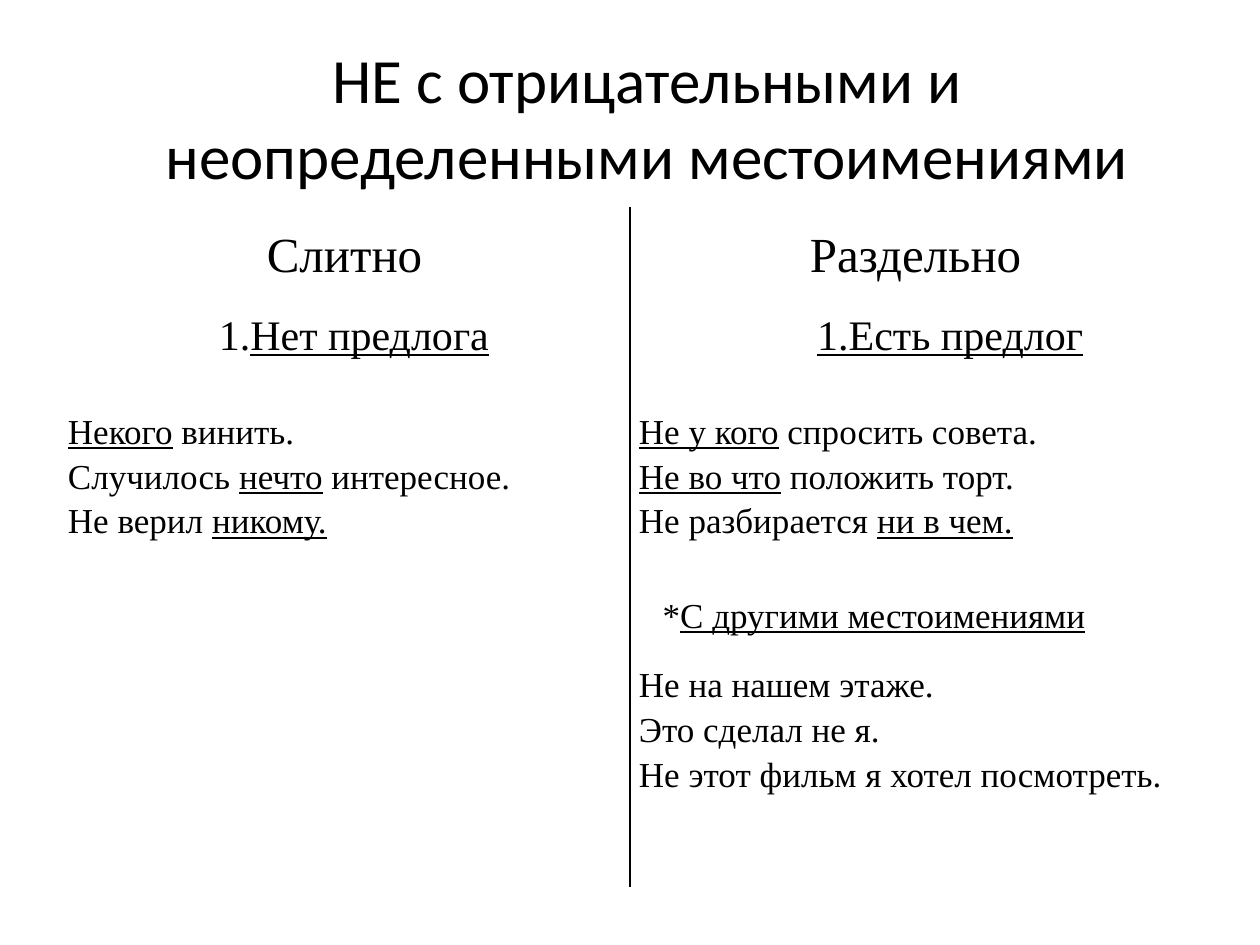
from lxml.etree import SubElement
from pptx import Presentation
from pptx.dml.color import RGBColor
from pptx.enum.text import MSO_ANCHOR, PP_ALIGN
from pptx.oxml import parse_xml
from pptx.oxml.ns import nsdecls, qn
from pptx.util import Cm, Pt


def color(code):
    return RGBColor.from_string(code)


def write(frame, text, size=20, font="Times New Roman", align=PP_ALIGN.JUSTIFY,
          space=1.15, ink="000000"):
    frame.word_wrap = True
    for row, line in enumerate(text.split("\n")):
        para = frame.paragraphs[0] if row == 0 else frame.add_paragraph()
        para.alignment = align
        para.line_spacing = space
        for part, words in enumerate(line.split("_")):
            if words:
                run = para.add_run()
                run.text = words
                run.font.size = Pt(size)
                run.font.name = font
                run.font.color.rgb = color(ink)
                run.font.underline = part % 2 == 1


deck = Presentation()
deck.slide_width, deck.slide_height = Cm(25.4), Cm(19.05)
slide = deck.slides.add_slide(deck.slide_layouts[5])

title = slide.shapes.title
title.left, title.top, title.width, title.height = Cm(1.27), Cm(0.76), Cm(23.55), Cm(3.18)
title.text_frame.vertical_anchor = MSO_ANCHOR.MIDDLE
write(title.text_frame, "НЕ с отрицательными и неопределенными местоимениями",
      size=36, font="Calibri", align=PP_ALIGN.CENTER, space=1)

highs = [1.83, 2.21, 3.43, 1.68, 4.57]
frame = slide.shapes.add_table(5, 2, Cm(1.19), Cm(4.17), Cm(23.02), Cm(sum(highs)))
table = frame.table
table.first_row = table.horz_banding = False
style = frame._element.find(".//" + qn("a:tableStyleId"))
style.text = "{2D5ABB26-0587-4C30-8999-92F81FD0307C}"
for row, high in zip(table.rows, highs):
    row.height = Cm(high)
    for cell, side in zip(row.cells, ("lnR", "lnL")):
        cell.fill.background()
        cell.margin_left = cell.margin_right = Cm(0.18)
        cell.margin_top = cell.margin_bottom = 0
        edge = parse_xml(f'<a:{side} {nsdecls("a")} w="12700"/>')
        fill = SubElement(edge, qn("a:solidFill"))
        SubElement(fill, qn("a:srgbClr")).set("val", "000000")
        cell._tc.get_or_add_tcPr().insert(0, edge)

for col, head in enumerate(["Слитно", "Раздельно"]):
    cell = table.cell(0, col)
    cell.vertical_anchor = MSO_ANCHOR.MIDDLE
    write(cell.text_frame, head, size=28, align=PP_ALIGN.CENTER)

lists = [
    (2, 0, "_Некого_ винить.\nСлучилось _нечто_ интересное.\nНе верил _никому._"),
    (2, 1, "_Не у кого_ спросить совета.\n_Не во что_ положить торт.\nНе разбирается _ни в чем._"),
    (4, 1, "Не на нашем этаже.\nЭто сделал не я.\nНе этот фильм я хотел посмотреть."),
]
for row, col, text in lists:
    write(table.cell(row, col).text_frame, text)

notes = [
    (3.96, 5.94, 6.35, 1.35, "1._Нет предлога_", 24, PP_ALIGN.CENTER),
    (15.09, 5.94, 8.13, 1.45, "_1.Есть предлог_", 24, PP_ALIGN.CENTER),
    (13.11, 11.71, 10.52, 1.17, "*_С другими местоимениями_", 20, PP_ALIGN.JUSTIFY),
]
for left, top, wide, high, text, size, align in notes:
    box = slide.shapes.add_textbox(Cm(left), Cm(top), Cm(wide), Cm(high))
    write(box.text_frame, text, size=size, align=align)

deck.save("out.pptx")
